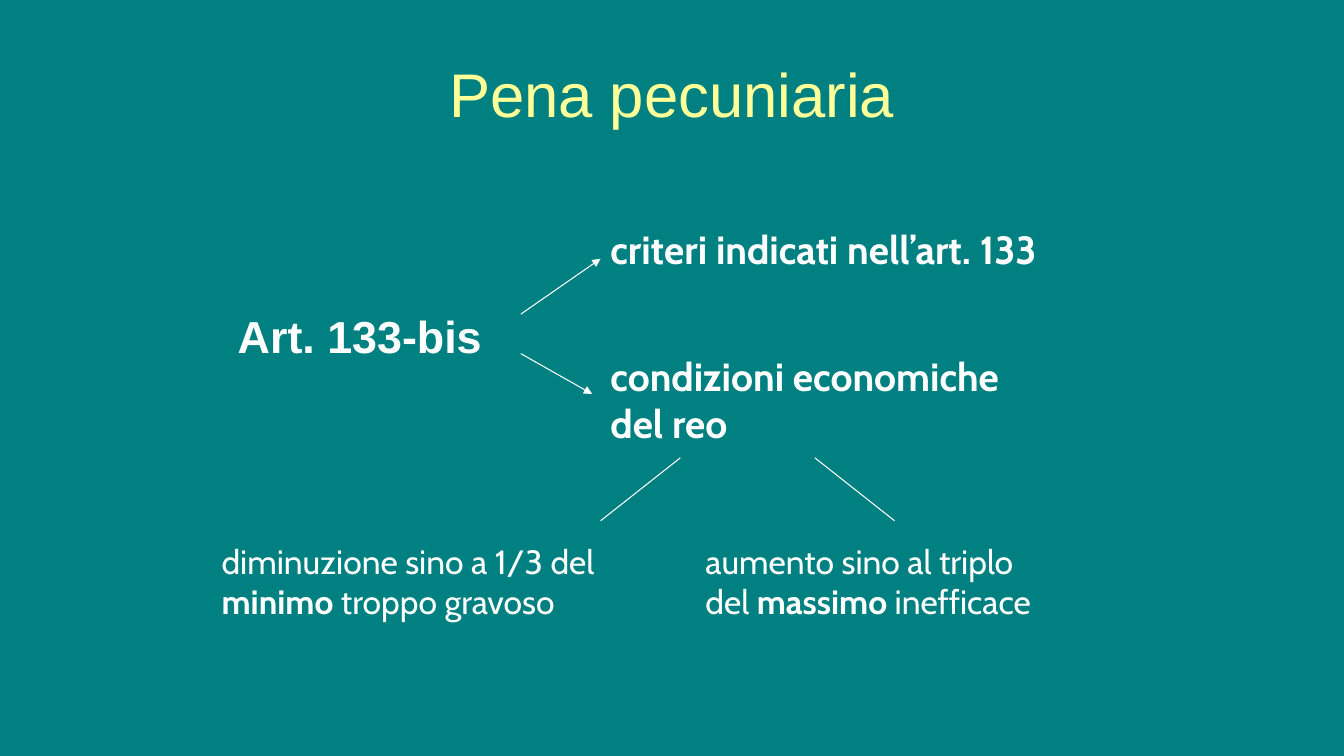
import pptx
import pptx.util
import pptx.dml.color
import pptx.enum.shapes
import pptx.enum.text
import pptx.oxml
import pptx.oxml.ns

WIDE, HIGH = 13.33, 7.5
COLS, ROWS = 160, 90
WHITE, YELLOW, TEAL = "FFFFFF", "FFFF99", "008080"
ANCHOR = pptx.enum.text.MSO_ANCHOR
FIT = pptx.enum.text.MSO_AUTO_SIZE
ALIGN = pptx.enum.text.PP_ALIGN


def tint(code):
    """Turn a hex string into a colour."""
    return pptx.dml.color.RGBColor.from_string(code)


def place(col, row):
    """Turn grid columns and rows into slide lengths."""
    return (pptx.util.Inches(col * WIDE / COLS),
            pptx.util.Inches(row * HIGH / ROWS))


def apply(item, look):
    """Set every attribute in a dict of format values."""
    for name, value in look.items():
        setattr(item, name, value)


def style(font, face, size, code, bold=False):
    """Format a font."""
    apply(font, {"name": face, "size": pptx.util.Pt(size), "bold": bold})
    font.color.rgb = tint(code)


def fill(holder, box, text, look, frame):
    """Move a placeholder and give it one formatted line."""
    left, top = place(*box[:2])
    width, height = place(*box[2:])
    apply(holder, {"left": left, "top": top, "width": width, "height": height})
    apply(holder.text_frame, {"auto_size": FIT.NONE, **frame})
    line = holder.text_frame.paragraphs[0]
    run = line.add_run()
    run.text = text
    style(run.font, *look)
    return line


def plain(line):
    """Remove the bullet, indent and space of a body line."""
    props = line._p.get_or_add_pPr()
    apply(line, {"space_before": pptx.util.Pt(0)})
    props.set("marL", "0")
    props.set("indent", "0")
    pptx.oxml.ns.qn("a:buNone")
    props.append(pptx.oxml.parse_xml(
        "<a:buNone %s/>" % pptx.oxml.ns.nsdecls("a")))


def note(slide, box, size, lines):
    """Add a text box whose lines are lists of (text, bold) runs."""
    shape = slide.shapes.add_textbox(*place(*box[:2]), *place(*box[2:]))
    frame = shape.text_frame
    apply(frame, {"word_wrap": True, "auto_size": FIT.SHAPE_TO_FIT_TEXT})
    for i, runs in enumerate(lines):
        line = frame.add_paragraph() if i else frame.paragraphs[0]
        for text, bold in runs:
            run = line.add_run()
            run.text = text
            style(run.font, "Cabin", size, WHITE, bold)


def link(slide, start, end, arrow):
    """Draw a thin white line, with an arrowhead if asked."""
    line = slide.shapes.add_connector(
        pptx.enum.shapes.MSO_CONNECTOR.STRAIGHT, *place(*start), *place(*end))
    line.line.color.rgb = tint(WHITE)
    line.line.width = pptx.util.Pt(0.75)
    space = pptx.oxml.ns.nsdecls("a")
    if arrow:
        line.line._get_or_add_ln().append(pptx.oxml.parse_xml(
            f'<a:tailEnd {space} type="triangle"/>'))
    line._element.spPr.append(pptx.oxml.parse_xml(f"<a:effectLst {space}/>"))


def main():
    """Build and save the slide."""
    deck = pptx.Presentation()
    deck.slide_width, deck.slide_height = place(COLS, ROWS)
    slide = deck.slides.add_slide(deck.slide_layouts[1])
    back = slide.background.fill
    back.solid()
    back.fore_color.rgb = tint(TEAL)

    title = fill(slide.shapes.title, (8, 3.6, 144, 15), "Pena pecuniaria",
                 ("Arial", 44, YELLOW), {"vertical_anchor": ANCHOR.MIDDLE})
    title.alignment = ALIGN.CENTER
    inset = dict(zip(("margin_left", "margin_top"), place(20.3, 15.7)))
    plain(fill(slide.placeholders[1], (8, 21, 144, 59.4), "Art. 133-bis",
               ("Arial", 32, WHITE, True),
               {"vertical_anchor": ANCHOR.TOP, **inset}))

    for start, end, arrow in (
            ((62, 37.4), (71.5, 30.8), True),
            ((62, 42.1), (70.5, 46.9), True),
            ((81, 54.5), (71.5, 62), False),
            ((97, 54.5), (106.5, 62), False)):
        link(slide, start, end, arrow)

    note(slide, (71.5, 26.2, 68.5, 6.8), 28,
         [[("criteri indicati nell’art. 133", True)]])
    note(slide, (71.5, 41.3, 58.7, 12.5), 28,
         [[("condizioni economiche", True)], [("del reo", True)]])
    note(slide, (25.2, 63.8, 69.1, 10.9), 24,
         [[("diminuzione sino a 1/3 del", False)],
          [("minimo", True), (" troppo gravoso", False)]])
    note(slide, (82.8, 63.8, 49.2, 10.9), 24,
         [[("aumento sino al triplo", False)],
          [("del ", False), ("massimo", True), (" inefficace", False)]])
    deck.save("out.pptx")


if __name__ == "__main__":
    main()
